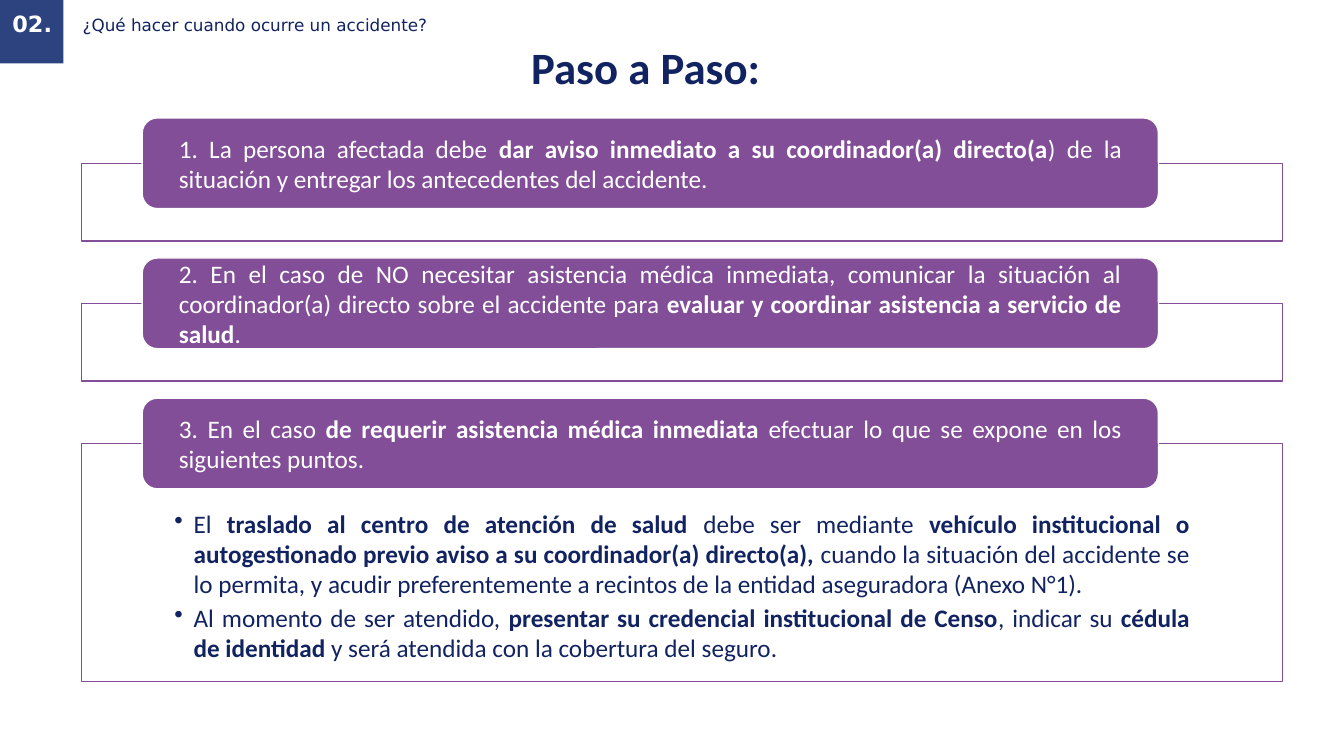
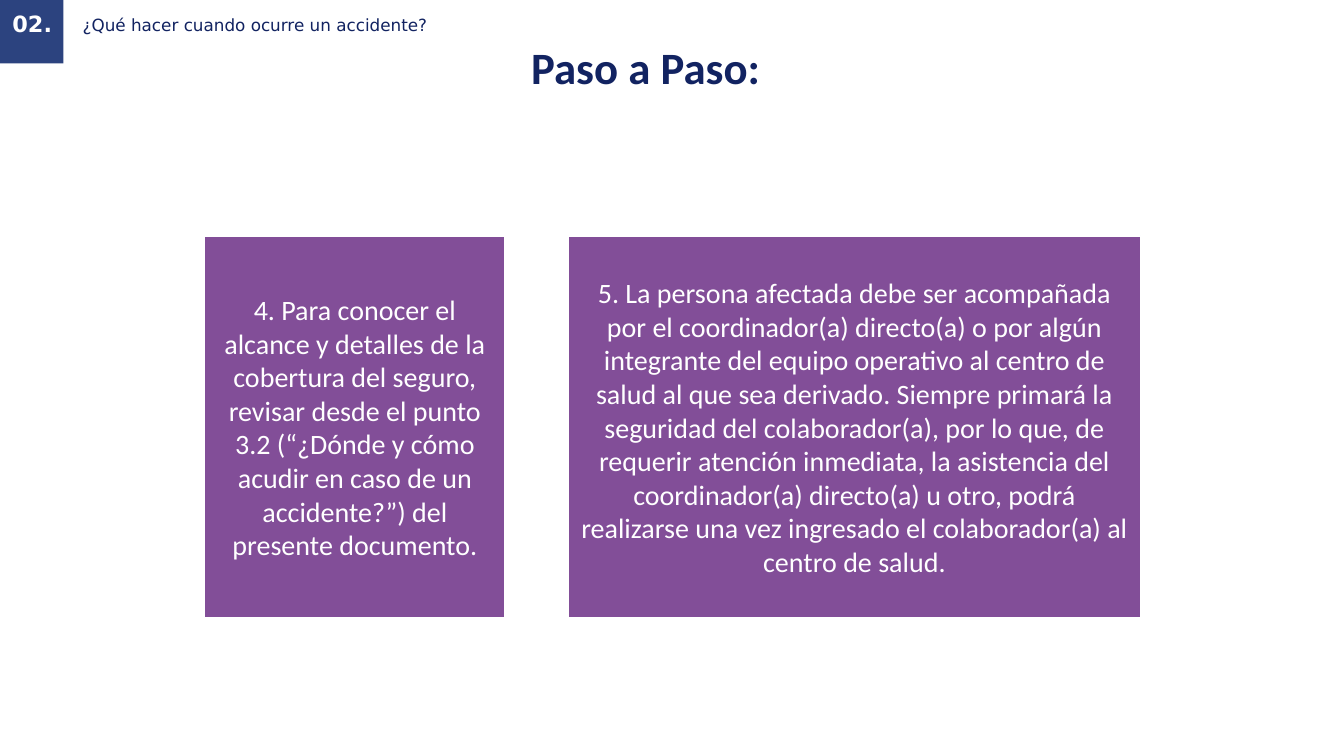
from dataclasses import dataclass

from lxml.etree import SubElement
from pptx import Presentation
from pptx.dml.color import RGBColor
from pptx.enum.shapes import MSO_SHAPE
from pptx.enum.text import MSO_ANCHOR, PP_ALIGN
from pptx.oxml.ns import qn
from pptx.util import Emu, Pt

COLORS = {
    "navy": "122361",
    "blue": "2C437F",
    "purple": "824E98",
    "white": "FFFFFF",
}
EMU_PER_PX = 9144  # 100 px to the inch
BULLET_INDENT = 19


@dataclass(frozen=True)
class Area:
    left: int
    top: int
    width: int
    height: int


@dataclass(frozen=True)
class TextStyle:
    size: int
    color: str
    font: str = "Calibri"
    bold: bool = False
    align: PP_ALIGN = PP_ALIGN.LEFT
    anchor: MSO_ANCHOR = MSO_ANCHOR.MIDDLE
    margins: tuple[int, int, int, int] = (10, 5, 10, 5)  # left, top, right, bottom
    line_spacing: float = 1.0
    space_after: float = 0
    bullet: bool = False


@dataclass(frozen=True)
class Step:
    text: str
    frame_height: int = 77
    details: tuple[str, ...] = ()


@dataclass(frozen=True)
class Panel:
    left: int
    width: int
    text: str


# Text styles
SECTION = TextStyle(12, "navy", "DejaVu Sans", margins=(0, 5, 10, 5), line_spacing=0.9)
NUMBER = TextStyle(16, "white", "DejaVu Sans", True, PP_ALIGN.CENTER, line_spacing=0.9)
TITLE = TextStyle(32, "navy", bold=True, anchor=MSO_ANCHOR.TOP)
STEP = TextStyle(18, "white", align=PP_ALIGN.JUSTIFY, margins=(32, 0, 32, 0))
DETAIL = TextStyle(18, "navy", align=PP_ALIGN.JUSTIFY, anchor=MSO_ANCHOR.TOP,
                   margins=(92, 64, 92, 14), space_after=2.7, bullet=True)
PANEL = TextStyle(20, "white", align=PP_ALIGN.CENTER, margins=(8, 8, 8, 8))

# Content: ** switches bold on and off
STEPS = (
    Step("1. La persona afectada debe **dar aviso inmediato a su coordinador(a) "
         "directo(a**) de la situación y entregar los antecedentes del accidente."),
    Step("2. En el caso de NO necesitar asistencia médica inmediata, comunicar la "
         "situación al coordinador(a) directo sobre el accidente para **evaluar y "
         "coordinar asistencia a servicio de salud**."),
    Step("3. En el caso **de requerir asistencia médica inmediata **efectuar lo que "
         "se expone en los siguientes puntos.", 236, (
             "El **traslado al centro de atención de salud **debe ser mediante "
             "**vehículo institucional o autogestionado previo aviso a su "
             "coordinador(a) directo(a), **cuando la situación del accidente se lo "
             "permita, y acudir preferentemente a recintos de la entidad "
             "aseguradora (Anexo N°1).",
             "Al momento de ser atendido, **presentar su credencial institucional de "
             "Censo**, indicar su **cédula de identidad **y será atendida con la "
             "cobertura del seguro.",
         )),
)
PANELS = (
    Panel(203, 298,
          "4. Para conocer el alcance y detalles de la cobertura del seguro, revisar "
          "desde el punto 3.2 (“¿Dónde y cómo acudir en caso de un accidente?”) del "
          "presente documento."),
    Panel(564, 567,
          "5. La persona afectada debe ser acompañada por el coordinador(a) "
          "directo(a) o por algún integrante del equipo operativo al centro de salud "
          "al que sea derivado. Siempre primará la seguridad del colaborador(a), por "
          "lo que, de requerir atención inmediata, la asistencia del coordinador(a) "
          "directo(a) u otro, podrá realizarse una vez ingresado el colaborador(a) "
          "al centro de salud."),
)


def px(length: int) -> Emu:
    return Emu(length * EMU_PER_PX)


def bounds(area: Area) -> tuple[Emu, ...]:
    return tuple(px(n) for n in (area.left, area.top, area.width, area.height))


def rgb(name: str) -> RGBColor:
    return RGBColor.from_string(COLORS[name])


def set_all(target, values: dict) -> None:
    for name, value in values.items():
        setattr(target, name, value)


def add_bullet(para) -> None:
    properties = para._p.get_or_add_pPr()
    properties.set("marL", str(px(BULLET_INDENT)))
    properties.set("indent", str(-px(BULLET_INDENT)))
    SubElement(properties, qn("a:buChar")).set("char", "•")


def write(box, texts: tuple[str, ...], style: TextStyle) -> None:
    frame = box.text_frame
    left, top, right, bottom = (px(margin) for margin in style.margins)
    set_all(frame, {
        "word_wrap": True, "vertical_anchor": style.anchor,
        "margin_left": left, "margin_top": top,
        "margin_right": right, "margin_bottom": bottom,
    })
    for index, text in enumerate(texts):
        para = frame.add_paragraph() if index else frame.paragraphs[0]
        set_all(para, {
            "alignment": style.align, "line_spacing": style.line_spacing,
            "space_before": Pt(0), "space_after": Pt(style.space_after),
        })
        if style.bullet:
            add_bullet(para)
        for part, piece in enumerate(text.split("**")):
            span = para.add_run()
            span.text = piece
            set_all(span.font, {
                "name": style.font, "size": Pt(style.size),
                "bold": style.bold or part % 2 == 1,
            })
            span.font.color.rgb = rgb(style.color)


def add_text(page, area: Area, text: str, style: TextStyle) -> None:
    write(page.shapes.add_textbox(*bounds(area)), (text,), style)


def add_block(page, area: Area, fill: str, line: str | None = None,
              kind: MSO_SHAPE = MSO_SHAPE.RECTANGLE):
    block = page.shapes.add_shape(kind, *bounds(area))
    block.shadow.inherit = False
    block.fill.solid()
    block.fill.fore_color.rgb = rgb(fill)
    if line:
        block.line.color.rgb = rgb(line)
        block.line.width = Pt(1)
    else:
        block.line.fill.background()
    return block


def add_page(deck):
    """Blank page with the shared header and title."""
    page = deck.slides.add_slide(deck.slide_layouts[6])
    add_block(page, Area(0, 0, 63, 63), "blue")
    add_text(page, Area(82, -1, 1191, 54), "¿Qué hacer cuando ocurre un accidente?", SECTION)
    add_text(page, Area(0, 6, 64, 38), "02.", NUMBER)
    add_text(page, Area(517, 34, 300, 64), "Paso a Paso:", TITLE)
    return page


def add_step(page, top: int, step: Step) -> None:
    frame = add_block(page, Area(81, top, 1191, step.frame_height), "white", "purple")
    if step.details:
        write(frame, step.details, DETAIL)
    card = add_block(page, Area(141, top - 45, 1008, 90), "purple", "white",
                     MSO_SHAPE.ROUNDED_RECTANGLE)
    write(card, (step.text,), STEP)


def add_panel(page, panel: Panel) -> None:
    block = add_block(page, Area(panel.left, 234, panel.width, 379), "purple", "white")
    write(block, (panel.text,), PANEL)


def main() -> None:
    deck = Presentation()
    deck.slide_width, deck.slide_height = px(1333), px(750)

    # Steps 1 to 3
    page = add_page(deck)
    for index, step in enumerate(STEPS):
        add_step(page, 162 + 139 * index, step)

    # Steps 4 and 5
    page = add_page(deck)
    for panel in PANELS:
        add_panel(page, panel)

    deck.save("out.pptx")


if __name__ == "__main__":
    main()
